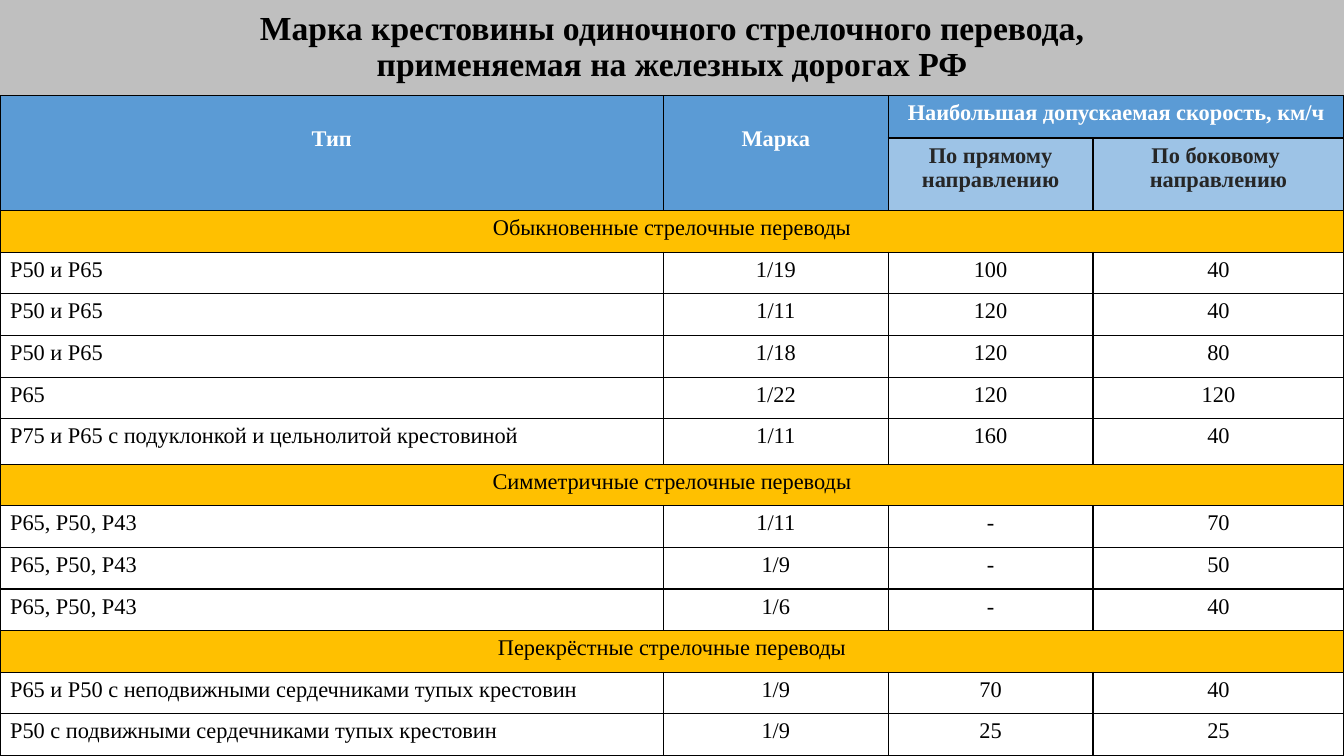
from dataclasses import dataclass

from lxml import etree
from pptx import Presentation
from pptx.dml.color import RGBColor
from pptx.enum.text import MSO_ANCHOR, MSO_AUTO_SIZE, PP_ALIGN
from pptx.oxml.ns import qn
from pptx.util import Inches, Pt

CENTER = PP_ALIGN.CENTER
LEFT = PP_ALIGN.LEFT
MIDDLE = MSO_ANCHOR.MIDDLE
NO_AUTOFIT = MSO_AUTO_SIZE.NONE
TITLE_ONLY = 5


@dataclass(frozen=True)
class Theme:
    font: str = "Times New Roman"
    title_size: int = 24
    table_size: int = 16
    border_width: float = 1
    black: str = "000000"
    white: str = "FFFFFF"
    dark: str = "262626"
    title_fill: str = "BFBFBF"
    header_fill: str = "5B9BD5"
    subheader_fill: str = "9DC3E6"
    section_fill: str = "FFC000"


THEME = Theme()
SLIDE_WIDTH, SLIDE_HEIGHT, TITLE_HEIGHT = 13.33, 7.5, 0.95
COLUMN_WIDTHS = [6.58, 2.23, 2.03, 2.49]
SPECIAL_HEIGHTS = {0: 0.42, 1: 0.72, 7: 0.45}
HEADER_ROWS = 2
HEADER_DROP = 0.31

TITLE = "Марка крестовины одиночного стрелочного перевода,\nприменяемая на железных дорогах РФ"
SECTIONS = [
    ("Обыкновенные стрелочные переводы", [
        ("Р50 и Р65", "1/19", "100", "40"),
        ("Р50 и Р65", "1/11", "120", "40"),
        ("Р50 и Р65", "1/18", "120", "80"),
        ("Р65", "1/22", "120", "120"),
        ("Р75 и Р65 с подуклонкой и цельнолитой крестовиной", "1/11", "160", "40"),
    ]),
    ("Симметричные стрелочные переводы", [
        ("Р65, Р50, Р43", "1/11", "-", "70"),
        ("Р65, Р50, Р43", "1/9", "-", "50"),
        ("Р65, Р50, Р43", "1/6", "-", "40"),
    ]),
    ("Перекрёстные стрелочные переводы", [
        ("Р65 и Р50 с неподвижными сердечниками тупых крестовин", "1/9", "70", "40"),
        ("Р50 с подвижными сердечниками тупых крестовин", "1/9", "25", "25"),
    ]),
]


def write_text(frame, text, size, color, bold, align):
    frame.text = text
    for paragraph in frame.paragraphs:
        paragraph.alignment = align
        for run in paragraph.runs:
            run.font.name = THEME.font
            run.font.size = Pt(size)
            run.font.bold = bold
            run.font.color.rgb = RGBColor.from_string(color)


def add_borders(cell):
    properties = cell._tc.get_or_add_tcPr()
    for side in ("lnL", "lnR", "lnT", "lnB"):
        border = etree.SubElement(properties, qn(f"a:{side}"), w=str(Pt(THEME.border_width)))
        fill = etree.SubElement(border, qn("a:solidFill"))
        etree.SubElement(fill, qn("a:srgbClr"), val=THEME.black)


def fill_cell(cell, text, fill=None, color=THEME.black, bold=False, align=CENTER):
    write_text(cell.text_frame, text, THEME.table_size, color, bold, align)
    if fill:
        cell.fill.solid()
        cell.fill.fore_color.rgb = RGBColor.from_string(fill)


def add_title(slide):
    title = slide.shapes.title
    title.left, title.top = Inches(0), Inches(0)
    title.width, title.height = Inches(SLIDE_WIDTH), Inches(TITLE_HEIGHT)
    title.fill.solid()
    title.fill.fore_color.rgb = RGBColor.from_string(THEME.title_fill)
    frame = title.text_frame
    frame.auto_size = NO_AUTOFIT
    frame.vertical_anchor = MIDDLE
    write_text(frame, TITLE, THEME.title_size, THEME.black, True, CENTER)
    for paragraph in frame.paragraphs:
        paragraph.line_spacing = 0.9
        paragraph.space_before = Pt(0)


def add_speed_table(slide):
    row_count = HEADER_ROWS + sum(1 + len(rows) for _, rows in SECTIONS)
    height = SLIDE_HEIGHT - TITLE_HEIGHT
    regular_height = (height - sum(SPECIAL_HEIGHTS.values())) / (row_count - len(SPECIAL_HEIGHTS))
    table = slide.shapes.add_table(
        row_count, len(COLUMN_WIDTHS),
        Inches(0), Inches(TITLE_HEIGHT), Inches(SLIDE_WIDTH), Inches(height),
    ).table
    table.first_row = table.horz_banding = False
    for column, width in zip(table.columns, COLUMN_WIDTHS):
        column.width = Inches(width)
    for index, row in enumerate(table.rows):
        row.height = Inches(SPECIAL_HEIGHTS.get(index, regular_height))
    for cell in table.iter_cells():
        add_borders(cell)
        cell.fill.background()
    return table


def fill_header(table):
    for column, heading in enumerate(("Тип", "Марка")):
        cell = table.cell(0, column)
        cell.merge(table.cell(1, column))
        cell.margin_top = Inches(HEADER_DROP)
        fill_cell(cell, heading, THEME.header_fill, THEME.white, True)
    speed = table.cell(0, 2)
    speed.merge(table.cell(0, 3))
    fill_cell(speed, "Наибольшая допускаемая скорость, км/ч", THEME.header_fill, THEME.white, True)
    for column, heading in ((2, "По прямому направлению"), (3, "По боковому \nнаправлению")):
        fill_cell(table.cell(1, column), heading, THEME.subheader_fill, THEME.dark, True)


def fill_sections(table):
    row = HEADER_ROWS
    for heading, entries in SECTIONS:
        section = table.cell(row, 0)
        section.merge(table.cell(row, len(COLUMN_WIDTHS) - 1))
        fill_cell(section, heading, THEME.section_fill)
        for row, entry in enumerate(entries, row + 1):
            for column, value in enumerate(entry):
                fill_cell(table.cell(row, column), value, align=CENTER if column else LEFT)
        row += 1


def main():
    presentation = Presentation()
    presentation.slide_width = Inches(SLIDE_WIDTH)
    presentation.slide_height = Inches(SLIDE_HEIGHT)
    slide = presentation.slides.add_slide(presentation.slide_layouts[TITLE_ONLY])
    add_title(slide)
    table = add_speed_table(slide)
    fill_header(table)
    fill_sections(table)
    presentation.save("out.pptx")


if __name__ == "__main__":
    main()
